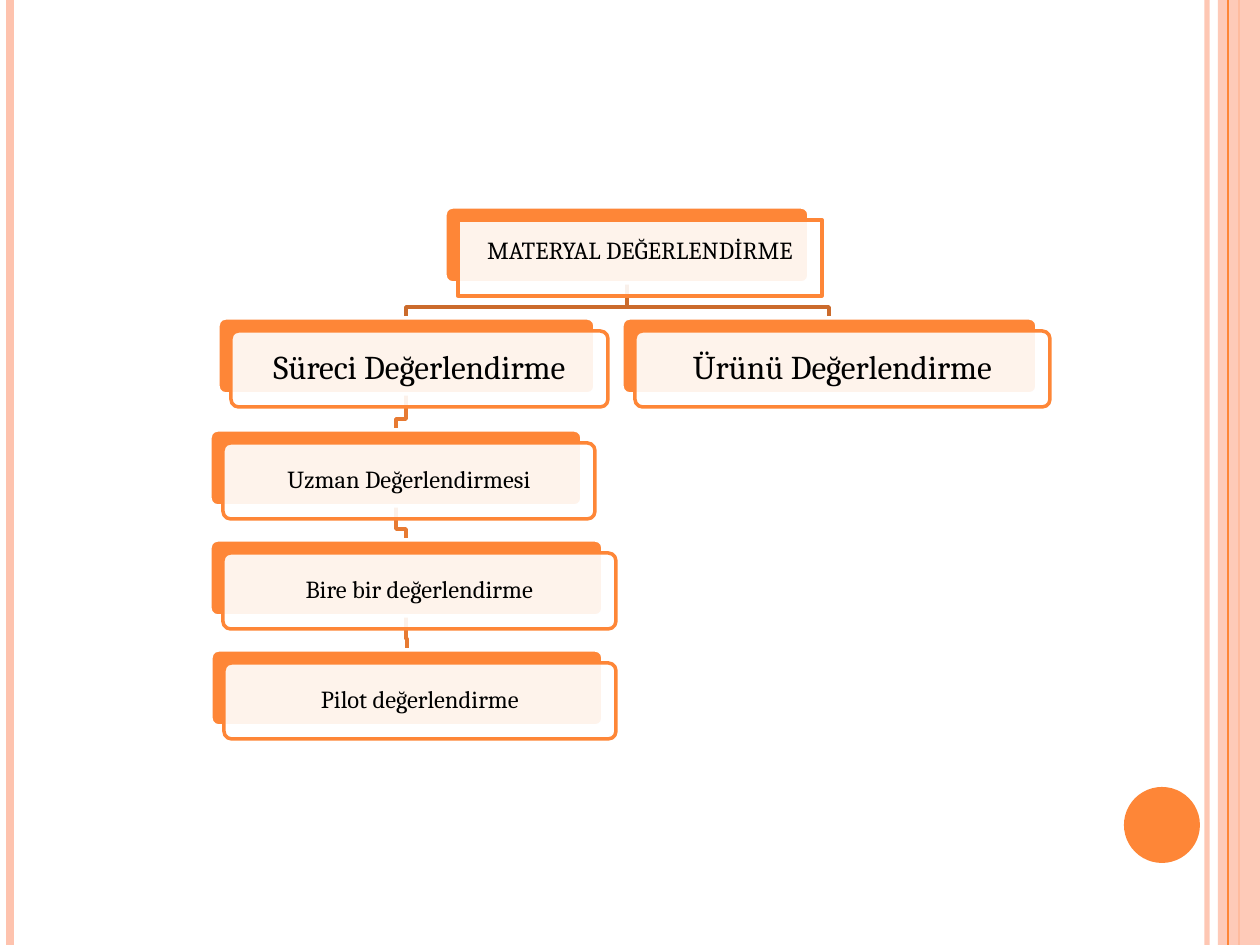
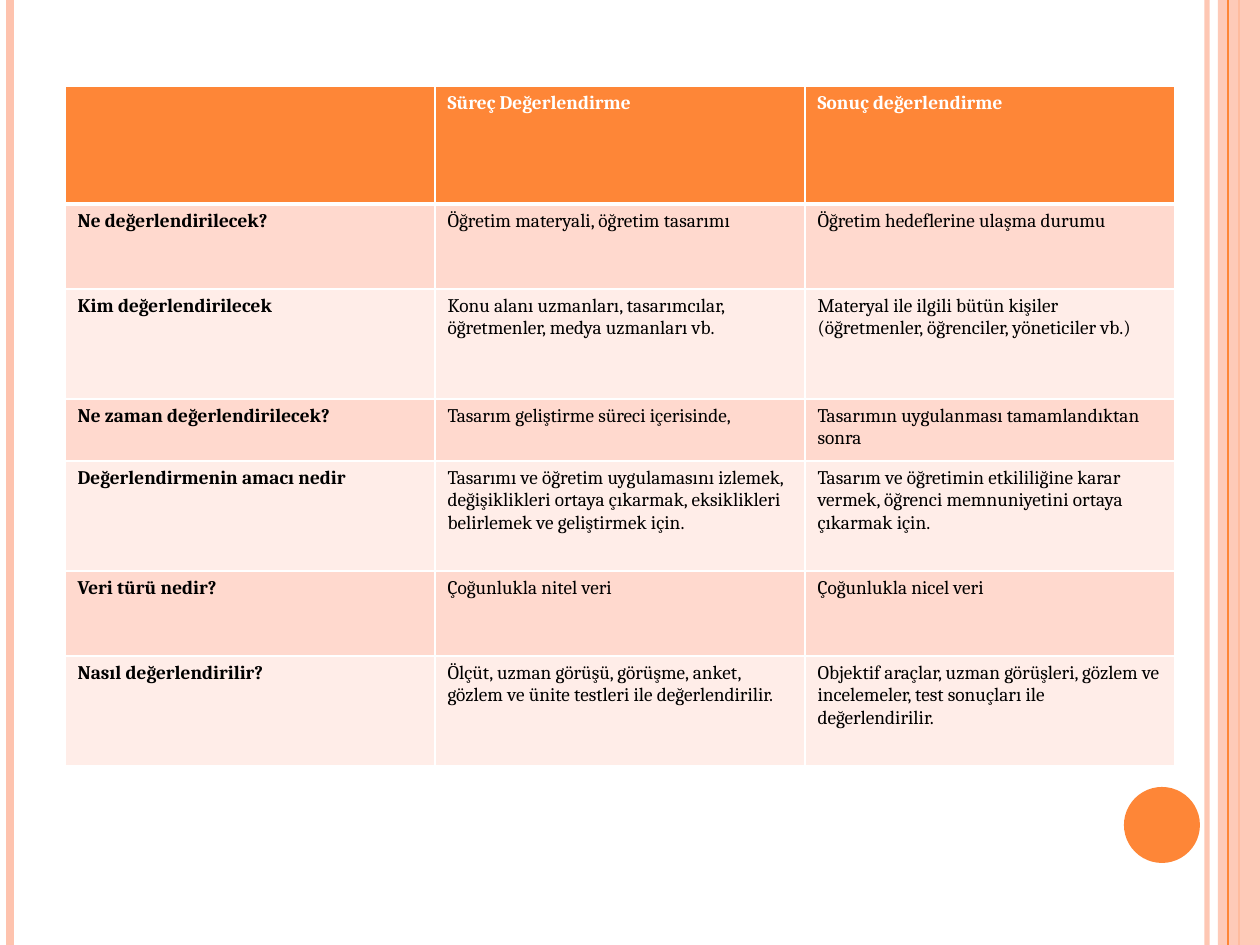
from lxml import etree
from pptx import Presentation
from pptx.dml.color import RGBColor
from pptx.enum.shapes import MSO_CONNECTOR, MSO_SHAPE
from pptx.enum.text import MSO_ANCHOR, PP_ALIGN
from pptx.oxml.ns import qn
from pptx.util import Pt

PX = 914400 / 126
WIDTH, HEIGHT = 1260, 945
STRAIGHT = MSO_CONNECTOR.STRAIGHT
RECT, ROUND, OVAL = MSO_SHAPE.RECTANGLE, MSO_SHAPE.ROUNDED_RECTANGLE, MSO_SHAPE.OVAL
MIDDLE, CENTER = MSO_ANCHOR.MIDDLE, PP_ALIGN.CENTER

ORANGE, PEACH, WHITE, BLACK = "FE8637", "FEC3AE", "FFFFFF", "000000"
TOP_LINK, LOWER_LINK = "CB6B2C", "E77A32"
BANDS = ("FFD9CE", "FFEDE8")
FONT = "Cambria"

NODE_HEIGHT, CARD_OFFSET, BEND_GAP = 76, 13, 11
NODES = {
    "root": ("MATERYAL DEĞERLENDİRME", 445, 207, 364, 14),
    "process": ("Süreci Değerlendirme", 218, 318, 377, 19),
    "expert": ("Uzman Değerlendirmesi", 210, 430, 372, 14),
    "single": ("Bire bir değerlendirme", 210, 540, 393, 14),
    "pilot": ("Pilot değerlendirme", 211, 650, 392, 14),
    "product": ("Ürünü Değerlendirme", 622, 318, 415, 19),
}
LINKS = [
    ("root", "product"),
    ("single", "pilot"),
    ("expert", "single"),
    ("process", "expert"),
    ("root", "process"),
]

TABLE_LEFT, TABLE_TOP, COLUMN_WIDTH = 65, 86, 370
ROW_HEIGHTS = (118, 85, 110, 62, 110, 85, 110)
ROWS = [
    ("", "Süreç Değerlendirme", "Sonuç değerlendirme"),
    ("Ne değerlendirilecek?", "Öğretim materyali, öğretim tasarımı",
     "Öğretim hedeflerine ulaşma durumu"),
    ("Kim değerlendirilecek",
     "Konu alanı uzmanları, tasarımcılar, öğretmenler, medya uzmanları vb.",
     "Materyal ile ilgili bütün kişiler (öğretmenler, öğrenciler, yöneticiler vb.)"),
    ("Ne zaman değerlendirilecek?", "Tasarım geliştirme süreci içerisinde,",
     "Tasarımın uygulanması tamamlandıktan sonra"),
    ("Değerlendirmenin amacı nedir",
     "Tasarımı ve öğretim uygulamasını izlemek, değişiklikleri ortaya çıkarmak, "
     "eksiklikleri belirlemek ve geliştirmek için.",
     "Tasarım ve öğretimin etkililiğine karar vermek, öğrenci memnuniyetini "
     "ortaya çıkarmak için."),
    ("Veri türü nedir?", "Çoğunlukla nitel veri", "Çoğunlukla nicel veri"),
    ("Nasıl değerlendirilir?",
     "Ölçüt, uzman görüşü, görüşme, anket, gözlem ve ünite testleri ile değerlendirilir.",
     "Objektif araçlar, uzman görüşleri, gözlem ve incelemeler, test sonuçları ile "
     "değerlendirilir."),
]


def px(length):
    """Turn px into EMU."""
    return round(length * PX)


def rgb(value):
    """Turn a hex string into a colour."""
    return RGBColor.from_string(value)


def set_all(target, values):
    """Set every attribute named in a dict."""
    for name, value in values.items():
        setattr(target, name, value)


def set_alpha(fill, percent):
    """Make a solid fill partly transparent."""
    color = fill._xPr.find(qn("a:solidFill"))[0]
    etree.SubElement(color, qn("a:alpha"), val=str(percent * 1000))


def paint(shape, fill=None, line=None, weight=2, alpha=100):
    """Give a shape its fill and outline and remove its shadow."""
    shape.shadow.inherit = False
    if fill:
        shape.fill.solid()
        shape.fill.fore_color.rgb = rgb(fill)
        if alpha < 100:
            set_alpha(shape.fill, alpha)
    else:
        shape.fill.background()
    if line:
        shape.line.color.rgb = rgb(line)
        shape.line.width = Pt(weight)
    else:
        shape.line.fill.background()


def add_box(page, kind, left, top, width, height, **look):
    """Add a painted preset shape."""
    box = page.shapes.add_shape(kind, px(left), px(top), px(width), px(height))
    if kind == ROUND:
        box.adjustments[0] = 0.1
    paint(box, **look)
    return box


def add_rule(page, x, color, weight, alpha=100):
    """Add a vertical line over the full page height."""
    rule = page.shapes.add_connector(STRAIGHT, px(x), 0, px(x), px(HEIGHT))
    rule.line.color.rgb = rgb(color)
    rule.line.width = Pt(weight)
    if alpha < 100:
        set_alpha(rule.line.fill, alpha)
    etree.SubElement(rule._element.spPr, qn("a:effectLst"))


def add_page(deck):
    """Add a blank page with the shared side bands and disc."""
    page = deck.slides.add_slide(deck.slide_layouts[6])
    add_rule(page, 1207, PEACH, 3, 93)
    add_rule(page, 10, PEACH, 4.5)
    add_rule(page, 1239, ORANGE, 1.5)
    add_box(page, RECT, 1218, 0, 42, HEIGHT, fill=PEACH, alpha=87)
    add_rule(page, 1228, ORANGE, 0.75)
    add_box(page, OVAL, 1124, 787, 76, 76, fill=ORANGE)
    return page


def write(frame, text, size, color, bold=False, **layout):
    """Write one formatted paragraph."""
    para = frame.paragraphs[0]
    set_all(para, layout)
    span = para.add_run()
    span.text = text
    set_all(span.font, {"name": FONT, "size": Pt(size), "bold": bold})
    span.font.color.rgb = rgb(color)


def add_link(page, parent, child):
    """Draw the bent line from a parent node to its child."""
    _, left, top, width, _ = NODES[parent]
    _, child_left, end, child_width, _ = NODES[child]
    start_x, end_x = left + width // 2, child_left + child_width // 2
    bend = end - BEND_GAP
    outline = page.shapes.build_freeform(start_x, top + NODE_HEIGHT, PX)
    outline.add_line_segments([(start_x, bend), (end_x, bend), (end_x, end)], close=False)
    paint(outline.convert_to_shape(), line=TOP_LINK if parent == "root" else LOWER_LINK)


def add_node(page, name):
    """Add an orange plate with a translucent text card over it."""
    text, left, top, width, size = NODES[name]
    is_root = name == "root"
    add_box(page, ROUND, left, top, width, NODE_HEIGHT, fill=ORANGE, line=WHITE)
    card = add_box(page, RECT if is_root else ROUND, left + CARD_OFFSET, top + CARD_OFFSET,
                   width, NODE_HEIGHT, fill=WHITE, line=ORANGE, alpha=90)
    inset = px(8)
    set_all(card.text_frame, {
        "word_wrap": True, "vertical_anchor": MIDDLE,
        "margin_left": inset, "margin_right": inset, "margin_top": inset,
        "margin_bottom": px(24) if is_root else inset,
    })
    write(card.text_frame, text, size, BLACK, alignment=CENTER,
          line_spacing=1.0 if is_root else 0.9)


def set_borders(cell, weights):
    """Draw white cell borders with a weight for each side."""
    properties = cell._tc.get_or_add_tcPr()
    for side, weight in weights.items():
        line = etree.SubElement(properties, qn(f"a:ln{side}"), w=str(Pt(weight)))
        fill = etree.SubElement(line, qn("a:solidFill"))
        etree.SubElement(fill, qn("a:srgbClr"), val=WHITE)


def add_comparison(page):
    """Add the table comparing process and result evaluation."""
    columns = len(ROWS[0])
    table = page.shapes.add_table(
        len(ROWS), columns, px(TABLE_LEFT), px(TABLE_TOP),
        px(COLUMN_WIDTH * columns), px(sum(ROW_HEIGHTS))).table
    for column in table.columns:
        column.width = px(COLUMN_WIDTH)
    for i, (texts, height) in enumerate(zip(ROWS, ROW_HEIGHTS)):
        table.rows[i].height = px(height)
        is_head = i == 0
        weights = {"L": 1, "R": 1, "T": 3 if i == 1 else 1, "B": 3 if is_head else 1}
        for j, text in enumerate(texts):
            cell = table.cell(i, j)
            set_borders(cell, weights)
            cell.fill.solid()
            cell.fill.fore_color.rgb = rgb(ORANGE if is_head else BANDS[(i - 1) % 2])
            if text:
                write(cell.text_frame, text, 11, WHITE if is_head else BLACK,
                      bold=is_head or j == 0)


def main():
    """Build both pages and save the deck."""
    deck = Presentation()
    set_all(deck, {"slide_width": px(WIDTH), "slide_height": px(HEIGHT)})
    tree_page = add_page(deck)
    for parent, child in LINKS:
        add_link(tree_page, parent, child)
    for name in NODES:
        add_node(tree_page, name)
    add_comparison(add_page(deck))
    deck.save("out.pptx")


if __name__ == "__main__":
    main()
